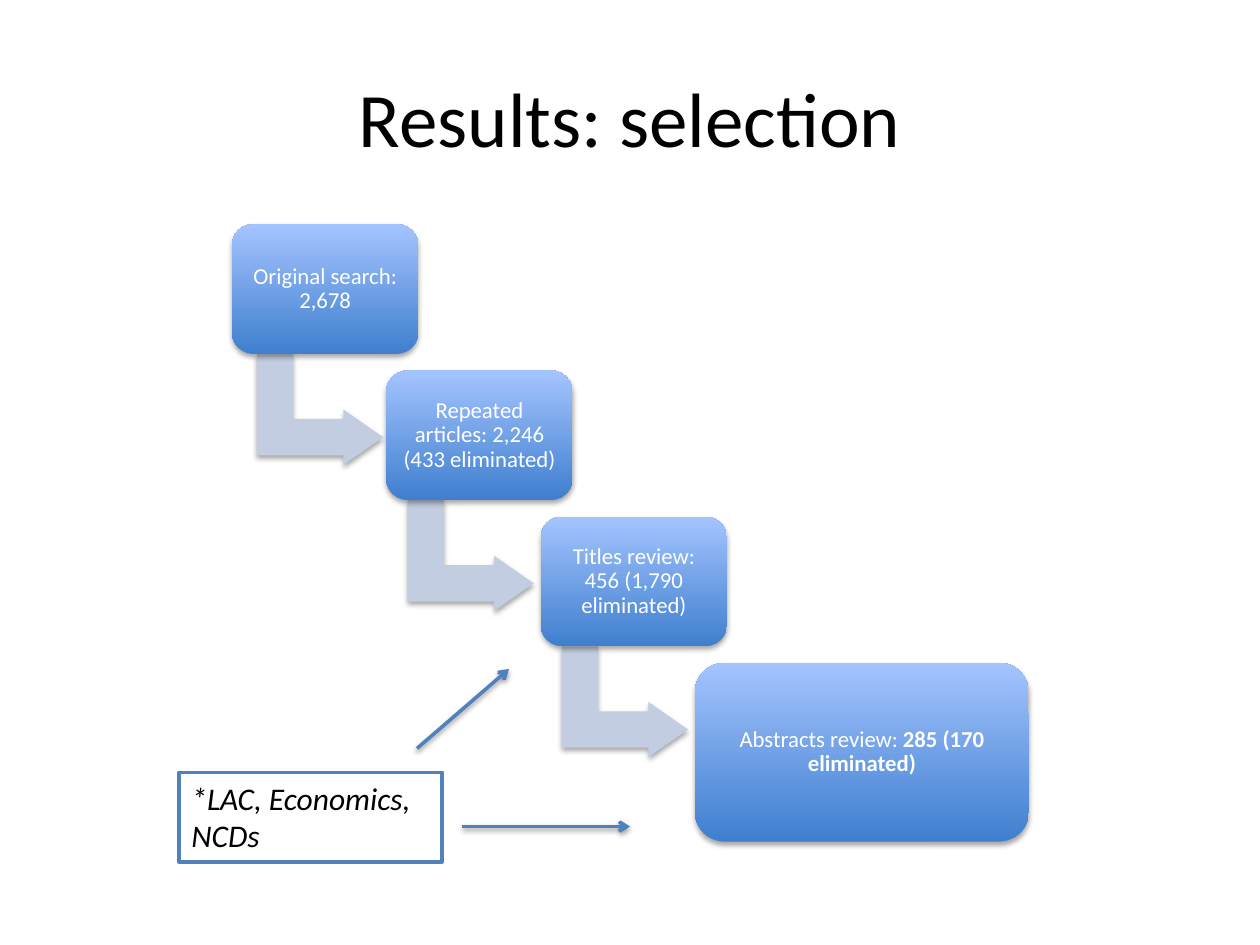
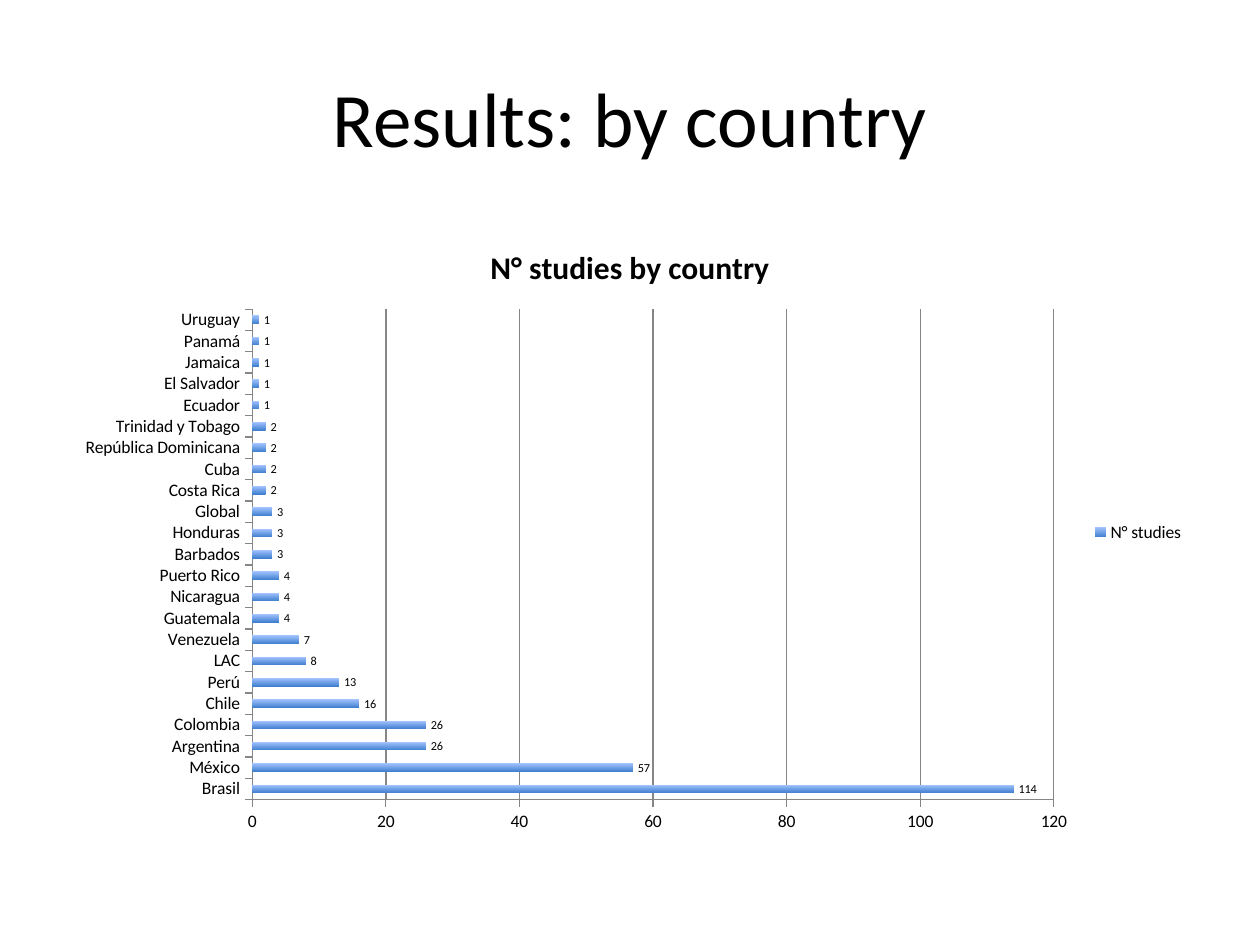
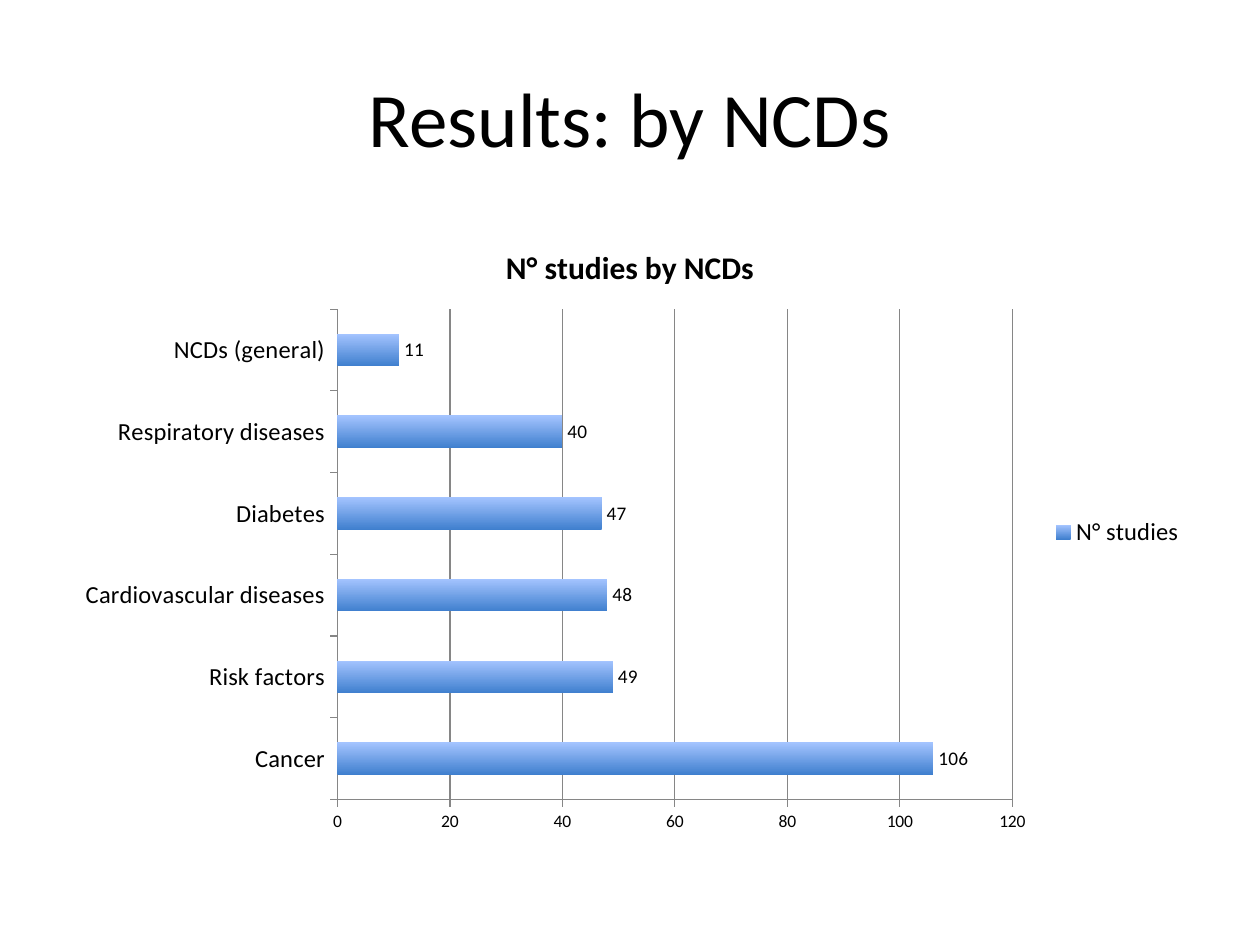
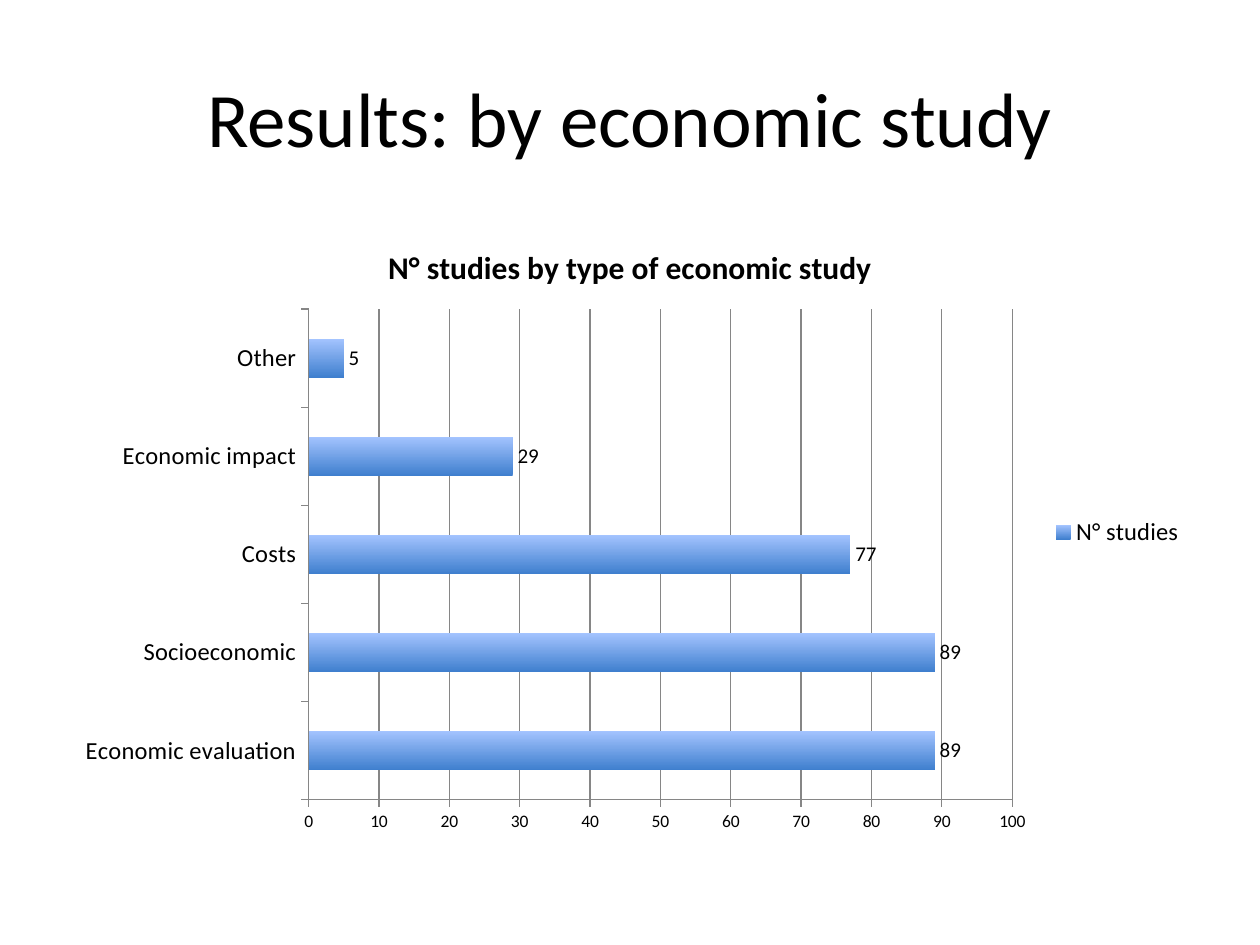
from lxml.etree import SubElement
from pptx import Presentation
from pptx.chart.data import CategoryChartData
from pptx.dml.color import RGBColor
from pptx.enum.chart import XL_CHART_TYPE, XL_LABEL_POSITION, XL_LEGEND_POSITION, XL_TICK_MARK
from pptx.enum.shapes import MSO_CONNECTOR, MSO_SHAPE
from pptx.enum.text import MSO_ANCHOR, MSO_AUTO_SIZE, PP_ALIGN
from pptx.oxml.ns import qn
from pptx.util import Inches, Pt

FONT = "Calibri"
BLACK = RGBColor(0x00, 0x00, 0x00)
WHITE = RGBColor(0xFF, 0xFF, 0xFF)
BLUE = RGBColor(0x4F, 0x81, 0xBD)
DEEP_BLUE = RGBColor(0x3F, 0x7F, 0xCE)
PALE_BLUE = RGBColor(0xA4, 0xC4, 0xFF)
ARROW_BLUE = RGBColor(0xC2, 0xCD, 0xE1)
AXIS_GREY = RGBColor(0x86, 0x86, 0x86)

TITLE_AT = (0.5, 0.3, 9, 1.25)
CHART_AT = (0.5, 1.75, 9, 4.95)

# Selection steps: text runs (text, bold), box size, shift of the arrow that leaves the box
SMALL_BOX, LARGE_BOX = (1.48, 1.03), (2.65, 1.42)
STEPS = [
    ([("Original search: 2,678", False)], SMALL_BOX, 0.26),
    ([("Repeated articles: 2,246 (433 eliminated)", False)], SMALL_BOX, 0.23),
    ([("Titles review: 456 (1,790 eliminated)", False)], SMALL_BOX, 0.23),
    ([("Abstracts review: ", False), ("285 (170 eliminated)", True)], LARGE_BOX, None),
]
STEP_LEFT, STEP_TOP = 1.84, 1.78
STEP_DX, STEP_DY = 1.225, 1.16
STEP_ARROW_DROP, STEP_ARROW_SIZE = 0.97, (0.88, 1)
STEP_ARROW_ADJ = (0.328, 0.25, 0.358)

CRITERIA = "*LAC, Economics, NCDs"
CRITERIA_AT = (1.42, 6.13, 2.09, 0.71)
CRITERIA_ARROWS = [(3.31, 5.94, 4.04, 5.31), (3.67, 6.56, 5, 6.56)]

SERIES = "N° studies"
CHARTS = [
    dict(
        heading="Results: by country", title="N° studies by country", text_size=10, label_size=7,
        data=[
            ("Brasil", 114), ("México", 57), ("Argentina", 26), ("Colombia", 26), ("Chile", 16),
            ("Perú", 13), ("LAC", 8), ("Venezuela", 7), ("Guatemala", 4), ("Nicaragua", 4),
            ("Puerto Rico", 4), ("Barbados", 3), ("Honduras", 3), ("Global", 3),
            ("Costa Rica", 2), ("Cuba", 2), ("República Dominicana", 2),
            ("Trinidad y Tobago", 2), ("Ecuador", 1), ("El Salvador", 1), ("Jamaica", 1),
            ("Panamá", 1), ("Uruguay", 1),
        ],
    ),
    dict(
        heading="Results: by NCDs", title="N° studies by NCDs", text_size=14, label_size=11,
        data=[
            ("Cancer", 106), ("Risk factors", 49), ("Cardiovascular diseases", 48),
            ("Diabetes", 47), ("Respiratory diseases", 40), ("NCDs (general)", 11),
        ],
    ),
    dict(
        heading="Results: by economic study", title="N° studies by type of economic study",
        text_size=14, label_size=12,
        data=[
            ("Economic evaluation", 89), ("Socioeconomic", 89), ("Costs", 77),
            ("Economic impact", 29), ("Other", 5),
        ],
    ),
]


def inches(*values):
    return [Inches(v) for v in values]


def set_font(font, size, color=BLACK, **format_values):
    font.name, font.size = FONT, Pt(size)
    font.color.rgb = color
    for name, value in format_values.items():
        setattr(font, name, value)


def fill_gradient(fill):
    """Deep blue at the bottom, pale blue at the top."""
    fill.gradient()
    fill.gradient_angle = 90
    for stop, color in zip(fill.gradient_stops, (DEEP_BLUE, PALE_BLUE)):
        stop.color.rgb = color


def add_shadow(s, distance, alpha):
    effects = SubElement(s._element.spPr, qn("a:effectLst"))
    shadow = SubElement(effects, qn("a:outerShdw"), blurRad=str(Pt(3.1)),
                        dist=str(Pt(distance)), dir="5400000", rotWithShape="0")
    color = SubElement(shadow, qn("a:srgbClr"), val=str(BLACK))
    SubElement(color, qn("a:alpha"), val=str(alpha * 1000))


def new_slide(prs, heading):
    slide = prs.slides.add_slide(prs.slide_layouts[6])
    tf = slide.shapes.add_textbox(*inches(*TITLE_AT)).text_frame
    tf.word_wrap, tf.vertical_anchor = True, MSO_ANCHOR.MIDDLE
    p = tf.paragraphs[0]
    p.alignment = PP_ALIGN.CENTER
    r = p.add_run()
    r.text = heading
    set_font(r.font, 44)
    return slide


def add_step_arrow(slide, left, top):
    s = slide.shapes.add_shape(MSO_SHAPE.BENT_UP_ARROW, *inches(left, top, *STEP_ARROW_SIZE))
    s.rotation = 90
    for i, value in enumerate(STEP_ARROW_ADJ):
        s.adjustments[i] = value
    s.fill.solid()
    s.fill.fore_color.rgb = ARROW_BLUE
    s.line.fill.background()
    add_shadow(s, 1.8, 35)


def add_step_box(slide, left, top, size, runs):
    s = slide.shapes.add_shape(MSO_SHAPE.ROUNDED_RECTANGLE, *inches(left, top, *size))
    fill_gradient(s.fill)
    s.line.fill.background()
    add_shadow(s, 1.8, 35)
    tf = s.text_frame
    tf.word_wrap, tf.vertical_anchor = True, MSO_ANCHOR.MIDDLE
    for side in ("left", "top", "right", "bottom"):
        setattr(tf, f"margin_{side}", Inches(0.05))
    p = tf.paragraphs[0]
    p.alignment, p.line_spacing = PP_ALIGN.CENTER, 0.9
    for text, bold in runs:
        r = p.add_run()
        r.text = text
        set_font(r.font, 13, WHITE, bold=bold)


def add_criteria(slide):
    s = slide.shapes.add_shape(MSO_SHAPE.RECTANGLE, *inches(*CRITERIA_AT))
    s.shadow.inherit = False
    s.fill.solid()
    s.fill.fore_color.rgb = WHITE
    s.line.color.rgb, s.line.width = BLUE, Pt(2)
    tf = s.text_frame
    tf.word_wrap, tf.vertical_anchor = True, MSO_ANCHOR.TOP
    tf.auto_size = MSO_AUTO_SIZE.SHAPE_TO_FIT_TEXT
    p = tf.paragraphs[0]
    p.alignment = PP_ALIGN.LEFT
    r = p.add_run()
    r.text = CRITERIA
    set_font(r.font, 18, italic=True)

    for ends in CRITERIA_ARROWS:
        line = slide.shapes.add_connector(MSO_CONNECTOR.STRAIGHT, *inches(*ends))
        line.line.color.rgb, line.line.width = BLUE, Pt(2)
        SubElement(line.line._get_or_add_ln(), qn("a:tailEnd"), type="arrow")
        add_shadow(line, 1.6, 38)


def build_selection(prs):
    slide = new_slide(prs, "Results: selection")
    for i, (runs, size, arrow_shift) in enumerate(STEPS):
        left, top = STEP_LEFT + i * STEP_DX, STEP_TOP + i * STEP_DY
        if arrow_shift is not None:
            add_step_arrow(slide, left + arrow_shift, top + STEP_ARROW_DROP)
        add_step_box(slide, left, top, size, runs)
    add_criteria(slide)


def build_chart(prs, heading, title, text_size, label_size, data):
    slide = new_slide(prs, heading)
    chart_data = CategoryChartData()
    chart_data.categories = [name for name, _ in data]
    chart_data.add_series(SERIES, [value for _, value in data])
    chart = slide.shapes.add_chart(
        XL_CHART_TYPE.BAR_CLUSTERED, *inches(*CHART_AT), chart_data).chart
    set_font(chart.font, 10)

    chart.has_title = True
    r = chart.chart_title.text_frame.paragraphs[0].add_run()
    r.text = title
    set_font(r.font, 18, bold=True)
    chart.chart_title.include_in_layout = False

    chart.has_legend = True
    chart.legend.position = XL_LEGEND_POSITION.RIGHT
    chart.legend.include_in_layout = False
    set_font(chart.legend.font, text_size)

    for axis, size in ((chart.category_axis, text_size), (chart.value_axis, 10)):
        axis.major_tick_mark, axis.minor_tick_mark = XL_TICK_MARK.OUTSIDE, XL_TICK_MARK.NONE
        axis.format.line.color.rgb = AXIS_GREY
        set_font(axis.tick_labels.font, size)
    chart.category_axis.has_major_gridlines = False
    chart.value_axis.has_major_gridlines = True
    chart.value_axis.major_gridlines.format.line.color.rgb = AXIS_GREY

    plot = chart.plots[0]
    plot.gap_width, plot.vary_by_categories = 150, False
    fill_gradient(plot.series[0].format.fill)
    labels = plot.series[0].data_labels
    labels.show_value, labels.position = True, XL_LABEL_POSITION.OUTSIDE_END
    set_font(labels.font, label_size)


def main():
    prs = Presentation()
    prs.slide_width, prs.slide_height = inches(10, 7.5)
    build_selection(prs)
    for chart in CHARTS:
        build_chart(prs, **chart)
    prs.save("out.pptx")


if __name__ == "__main__":
    main()
